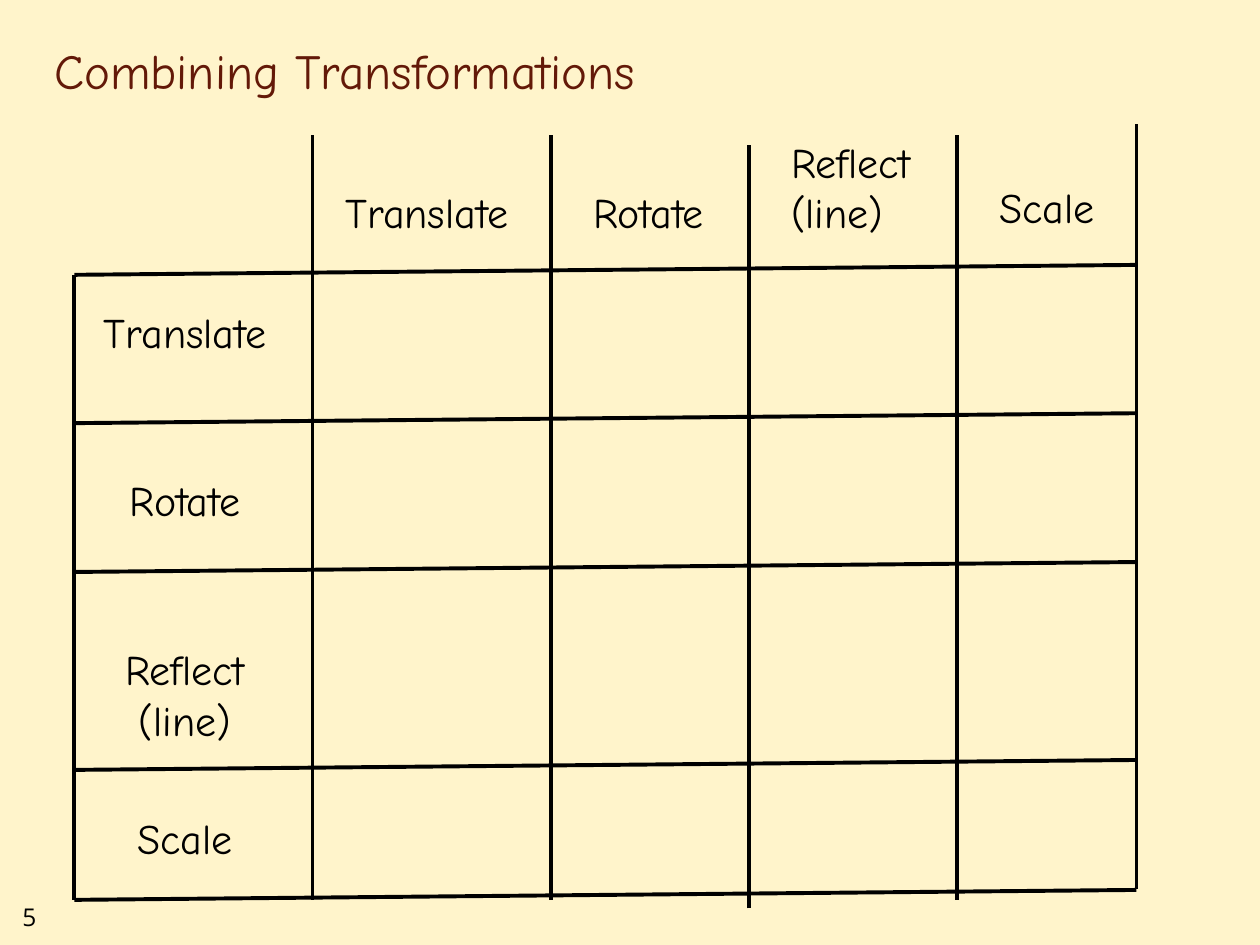
from dataclasses import dataclass

import pptx
import pptx.dml.color
import pptx.enum.shapes
import pptx.enum.text
import pptx.oxml.ns
import pptx.util
from lxml import etree

Cm = pptx.util.Cm
Pt = pptx.util.Pt
RGBColor = pptx.dml.color.RGBColor
Align = pptx.enum.text.PP_ALIGN

CREAM = RGBColor(0xFF, 0xF4, 0xCB)
BROWN = RGBColor(0x63, 0x19, 0x08)
BLACK = RGBColor(0, 0, 0)
HAND = "Comic Neue"
SANS = "Open Sans"


@dataclass
class Move:
    """A transformation, with its label size and column heading position."""
    name: str
    width: float
    height: float
    left: float
    top: float


@dataclass
class Rule:
    x1: float
    y1: float
    x2: float
    y2: float


MOVES = [
    Move("Translate", 3.94, 1.27, 6.71, 3.63),
    Move("Rotate", 2.97, 1.27, 11.71, 3.63),
    Move("Reflect\v(line)", 3.33, 2.31, 15.7, 2.62),
    Move("Scale", 2.54, 1.27, 19.89, 3.53),
]
LEFT, RIGHT = 1.5, 22.91
RISE = 0.2
ROWS = [5.54, 8.53, 11.53, 15.52, 18.14]
COLS = [(LEFT, 18.14, 5.54), (6.3, 18.14, 2.72), (11.1, 18.14, 2.72),
        (15.09, 18.31, 2.92), (19.3, 18.14, 2.72), (RIGHT, 17.93, 2.51)]
RULES = ([Rule(LEFT, y, RIGHT, y - RISE) for y in ROWS]
         + [Rule(x, low, x, high) for x, low, high in COLS])
MID = 3.73
FIRST, STEP = 6.05, 3.4


def style(frame, size: float, font: str, color: RGBColor, align) -> None:
    for para in frame.paragraphs:
        para.alignment = align
        for run in para.runs:
            run.font.size = Pt(size)
            run.font.name = font
            run.font.color.rgb = color


def label(slide, text: str, left: float, top: float, width: float,
          height: float, size: float = 24, font: str = HAND,
          align=Align.LEFT, wrap: bool = False) -> None:
    box = slide.shapes.add_textbox(Cm(left), Cm(top), Cm(width), Cm(height))
    frame = box.text_frame
    frame.word_wrap = wrap
    frame.auto_size = pptx.enum.text.MSO_AUTO_SIZE.SHAPE_TO_FIT_TEXT
    frame.text = text
    style(frame, size, font, BLACK, align)


def draw(slide, rule: Rule) -> None:
    line = slide.shapes.add_connector(
        pptx.enum.shapes.MSO_CONNECTOR.STRAIGHT,
        Cm(rule.x1), Cm(rule.y1), Cm(rule.x2), Cm(rule.y2))
    line.line.color.rgb = BLACK
    line.line.width = Pt(2.25)
    etree.SubElement(line._element.spPr, pptx.oxml.ns.qn("a:effectLst"))


def head(slide) -> None:
    title = slide.shapes.title
    title.left, title.top = Cm(0.84), Cm(0.43)
    title.width, title.height = Cm(21.59), Cm(1.7)
    frame = title.text_frame
    frame.auto_size = pptx.enum.text.MSO_AUTO_SIZE.NONE
    frame.vertical_anchor = pptx.enum.text.MSO_ANCHOR.BOTTOM
    frame.text = "Combining Transformations"
    style(frame, 28, HAND, BROWN, Align.LEFT)


def main() -> None:
    deck = pptx.Presentation()
    deck.slide_width, deck.slide_height = Cm(25.4), Cm(19.05)
    slide = deck.slides.add_slide(deck.slide_layouts[5])
    slide.background.fill.solid()
    slide.background.fill.fore_color.rgb = CREAM

    head(slide)
    label(slide, "5", 0.2, 18.06, 1.9, 0.86, 14, SANS, wrap=True)
    for i, move in enumerate(MOVES):
        label(slide, move.name, MID - move.width / 2, FIRST + i * STEP,
              move.width, move.height, align=Align.CENTER)
    for move in MOVES:
        label(slide, move.name, move.left, move.top, move.width, move.height)
    for rule in RULES:
        draw(slide, rule)
    deck.save("out.pptx")


if __name__ == "__main__":
    main()
